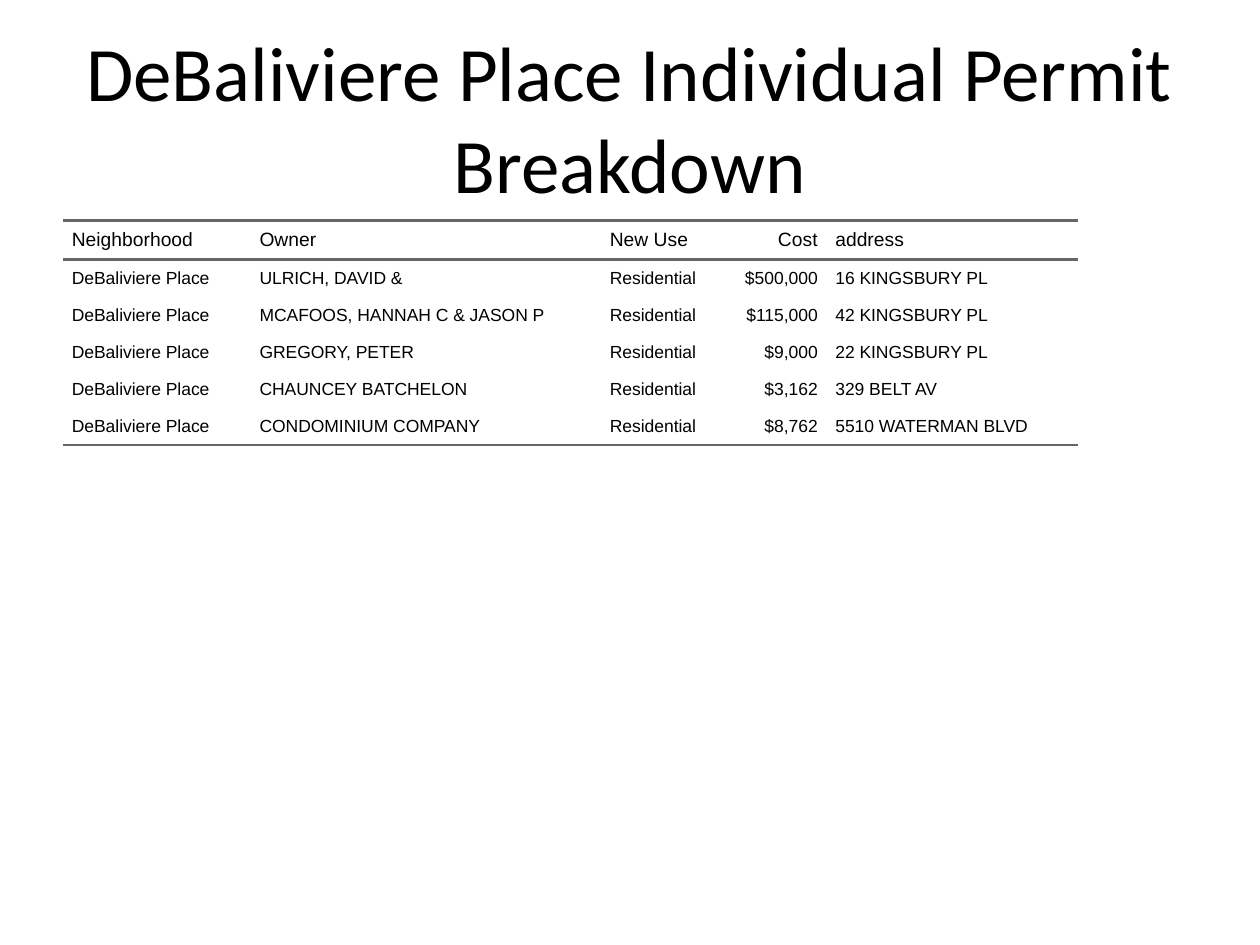
import pptx
import pptx.dml.color
import pptx.enum.text
import pptx.oxml
import pptx.oxml.ns
import pptx.util

Inches = pptx.util.Inches
Pt = pptx.util.Pt
Align = pptx.enum.text.PP_ALIGN
Anchor = pptx.enum.text.MSO_ANCHOR


def color(value):
    return pptx.dml.color.RGBColor.from_string(value)


def add_border(cell, side, value, width):
    cell_format = cell._tc.get_or_add_tcPr()
    line = pptx.oxml.parse_xml(
        f'<a:{side} {pptx.oxml.ns.nsdecls("a")} w="{Pt(width)}">'
        f'<a:solidFill><a:srgbClr val="{value}"/></a:solidFill></a:{side}>'
    )
    cell_format.append(line)


deck = pptx.Presentation()
deck.slide_width = Inches(10)
deck.slide_height = Inches(7.5)
page = deck.slides.add_slide(deck.slide_layouts[5])

title = page.shapes.title
title_place = {"left": 0.5, "top": 0.3, "width": 9, "height": 1.25}
for name, value in title_place.items():
    setattr(title, name, Inches(value))
title.text_frame.vertical_anchor = Anchor.MIDDLE
para = title.text_frame.paragraphs[0]
para.alignment = Align.CENTER
span = para.add_run()
span.text = "DeBaliviere Place Individual Permit Breakdown"
for name, value in {"name": "Calibri", "size": Pt(44)}.items():
    setattr(span.font, name, value)
span.font.color.rgb = color("000000")

headings = ["Neighborhood", "Owner", "New Use", "Cost", "address"]
permits = [
    ("ULRICH, DAVID &", "$500,000", "16 KINGSBURY PL"),
    ("MCAFOOS, HANNAH C & JASON P", "$115,000", "42 KINGSBURY PL"),
    ("GREGORY, PETER", "$9,000", "22 KINGSBURY PL"),
    ("CHAUNCEY BATCHELON", "$3,162", "329 BELT AV"),
    ("CONDOMINIUM COMPANY", "$8,762", "5510 WATERMAN BLVD"),
]
rows = [headings] + [
    ["DeBaliviere Place", owner, "Residential", cost, address]
    for owner, cost, address in permits
]
column_widths = [1.49, 2.78, 1.04, 0.75, 2]

frame = page.shapes.add_table(
    len(rows), len(headings), Inches(0.5), Inches(1.75), Inches(9), Inches(1.5)
)
table = frame.table
table.first_row = False
table.horz_banding = False
style = table._tbl.tblPr.find(pptx.oxml.ns.qn("a:tableStyleId"))
style.text = "{2D5ABB26-0587-4C30-8999-92F81FD0307C}"
for column, width in zip(table.columns, column_widths):
    column.width = Inches(width)
for row in table.rows:
    row.height = Inches(0.25)

cell_format = {
    "margin_left": 0,
    "margin_right": 0,
    "margin_top": Inches(0.07),
    "margin_bottom": Inches(0.07),
    "vertical_anchor": Anchor.MIDDLE,
}
last_row = len(rows) - 1
for row_index, row_texts in enumerate(rows):
    for column_index, text in enumerate(row_texts):
        cell = table.cell(row_index, column_index)
        for name, value in cell_format.items():
            setattr(cell, name, value)
        if row_index == 0:
            add_border(cell, "lnT", "666666", 1.5)
        if row_index in (0, last_row):
            add_border(cell, "lnB", "666666", 1.5)
        cell.fill.background()

        para = cell.text_frame.paragraphs[0]
        para.alignment = Align.RIGHT if headings[column_index] == "Cost" else Align.LEFT
        para.space_before = Pt(5)
        para.space_after = Pt(5)
        for side in ("marL", "marR"):
            para._p.get_or_add_pPr().set(side, str(Inches(0.07)))
        span = para.add_run()
        span.text = text
        span_format = {"name": "Arial", "size": Pt(11 if row_index == 0 else 10)}
        for name, value in span_format.items():
            setattr(span.font, name, value)
        span.font.color.rgb = color("000000")

frame.width = Inches(9)
frame.height = Inches(4.95)

deck.save("out.pptx")
